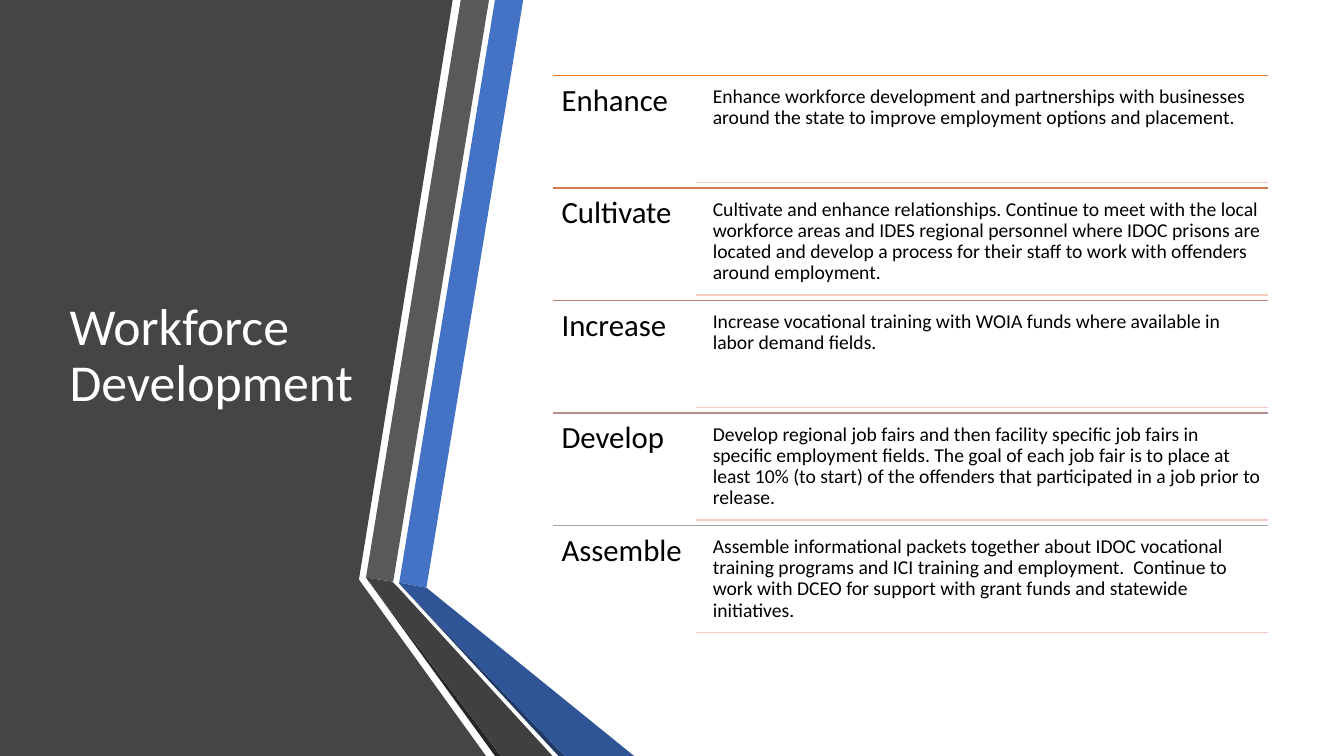
"""Build the Workforce Development slide with its five strategy rows."""
from pptx import Presentation
from pptx.dml.color import RGBColor
from pptx.enum import shapes, text
from pptx.oxml import parse_xml
from pptx.oxml.ns import nsdecls
from pptx.util import Inches, Pt

TITLE = "Workforce Development"
ROWS = [
    ("Enhance", "ED7D31", "Enhance workforce development and partnerships with businesses "
     "around the state to improve employment options and placement."),
    ("Cultivate", "D87A51", "Cultivate and enhance relationships. Continue to meet with the "
     "local workforce areas and IDES regional personnel where IDOC prisons are located and "
     "develop a process for their staff to work with offenders around employment."),
    ("Increase", "C48170", "Increase vocational training with WOIA funds where available in "
     "labor demand fields."),
    ("Develop", "B4908B", "Develop regional job fairs and then facility specific job fairs in "
     "specific employment fields. The goal of each job fair is to place at least 10% (to start) "
     "of the offenders that participated in a job prior to release."),
    ("Assemble", "A5A5A5", "Assemble informational packets together about IDOC vocational "
     "training programs and ICI training and employment.  Continue to work with DCEO for "
     "support with grant funds and statewide initiatives."),
]
PANEL = ("454545", [(0, 0), (4.49, 0), (3.56, 5.75), (4.82, 7.5), (0, 7.5)])
RIBBONS = [
    ("4472C4", [(3.96, 5.78), (4.23, 5.83), (5.19, 0), (4.91, 0)]),
    ("595959", [(4.85, 0), (4.57, 0), (3.63, 5.73), (3.9, 5.77)]),
    ("262626", [(3.63, 5.73), (4.91, 7.5), (4.97, 7.5)]),
    ("203864", [(3.96, 5.79), (5.54, 7.5), (5.6, 7.5)]),
    ("2F5597", [(3.96, 5.79), (5.6, 7.5), (6.29, 7.5), (4.23, 5.83), (3.96, 5.78)]),
    ("404040", [(5.48, 7.5), (3.95, 5.83), (3.89, 5.77), (3.63, 5.73), (4.97, 7.5)]),
]
LEFT, DETAIL_LEFT, RIGHT = 5.48, 6.9, 12.58
TOP, BOTTOM = 0.75, 6.33
PITCH = (BOTTOM - TOP) / len(ROWS)
INDENT, DETAIL_DROP, DETAIL_HEIGHT = 0.11, 0.05, 1.01
RULE_COLOR = "F6CCBE"


def rgb(value):
    return RGBColor.from_string(value)


def add_outline(s, color, points):
    start, *rest = [(Inches(x), Inches(y)) for x, y in points]
    builder = s.shapes.build_freeform(*start)
    builder.add_line_segments(rest, close=True)
    sp = builder.convert_to_shape()
    sp.shadow.inherit = False
    sp.fill.solid()
    sp.fill.fore_color.rgb = rgb(color)
    sp.line.fill.background()


def add_rule(s, left, y, color):
    line = s.shapes.add_connector(
        shapes.MSO_CONNECTOR.STRAIGHT, Inches(left), Inches(y), Inches(RIGHT), Inches(y))
    line.line.color.rgb = rgb(color)
    line.line.width = Pt(1)
    line._element.spPr.append(parse_xml(f"<a:effectLst {nsdecls('a')}/>"))


def place(sp, box):
    for name, value in zip(("left", "top", "width", "height"), box):
        setattr(sp, name, Inches(value))


def write(sp, words, size, color, inset, anchor):
    tf = sp.text_frame
    margins = dict(zip(("margin_left", "margin_top", "margin_right", "margin_bottom"),
                       map(Inches, inset)))
    frame = {"word_wrap": True, "auto_size": text.MSO_AUTO_SIZE.NONE,
             "vertical_anchor": anchor, **margins}
    for name, value in frame.items():
        setattr(tf, name, value)
    p = tf.paragraphs[0]
    p.alignment = text.PP_ALIGN.LEFT
    p.line_spacing = 0.9
    r = p.add_run()
    r.text = words
    for name, value in {"name": "Calibri", "size": Pt(size)}.items():
        setattr(r.font, name, value)
    r.font.color.rgb = rgb(color)


def add_text(s, box, words, size, inset):
    sp = s.shapes.add_textbox(*map(Inches, box))
    write(sp, words, size, "000000", [inset] * 4, text.MSO_ANCHOR.TOP)


def main():
    prs = Presentation()
    prs.slide_width, prs.slide_height = Inches(13.33), Inches(7.5)
    s = prs.slides.add_slide(prs.slide_layouts[5])
    for color, points in [PANEL, *RIBBONS]:
        add_outline(s, color, points)

    title = s.shapes.title
    s.shapes._spTree.append(title._element)
    place(title, (0.59, 0.75, 3.04, 5.58))
    write(title, TITLE, 37, "FFFFFF", (0.1, 0.05, 0.1, 0.05), text.MSO_ANCHOR.MIDDLE)

    for i, (heading, color, detail) in enumerate(ROWS):
        y = TOP + i * PITCH
        detail_top = y + DETAIL_DROP
        detail_left = DETAIL_LEFT + INDENT
        add_rule(s, LEFT, y, color)
        add_text(s, (LEFT, y, DETAIL_LEFT - LEFT, PITCH), heading, 22, 0.09)
        add_text(s, (detail_left, detail_top, RIGHT - detail_left, DETAIL_HEIGHT),
                 detail, 14, 0.06)
        add_rule(s, DETAIL_LEFT, detail_top + DETAIL_HEIGHT, RULE_COLOR)
    prs.save("out.pptx")


if __name__ == "__main__":
    main()
